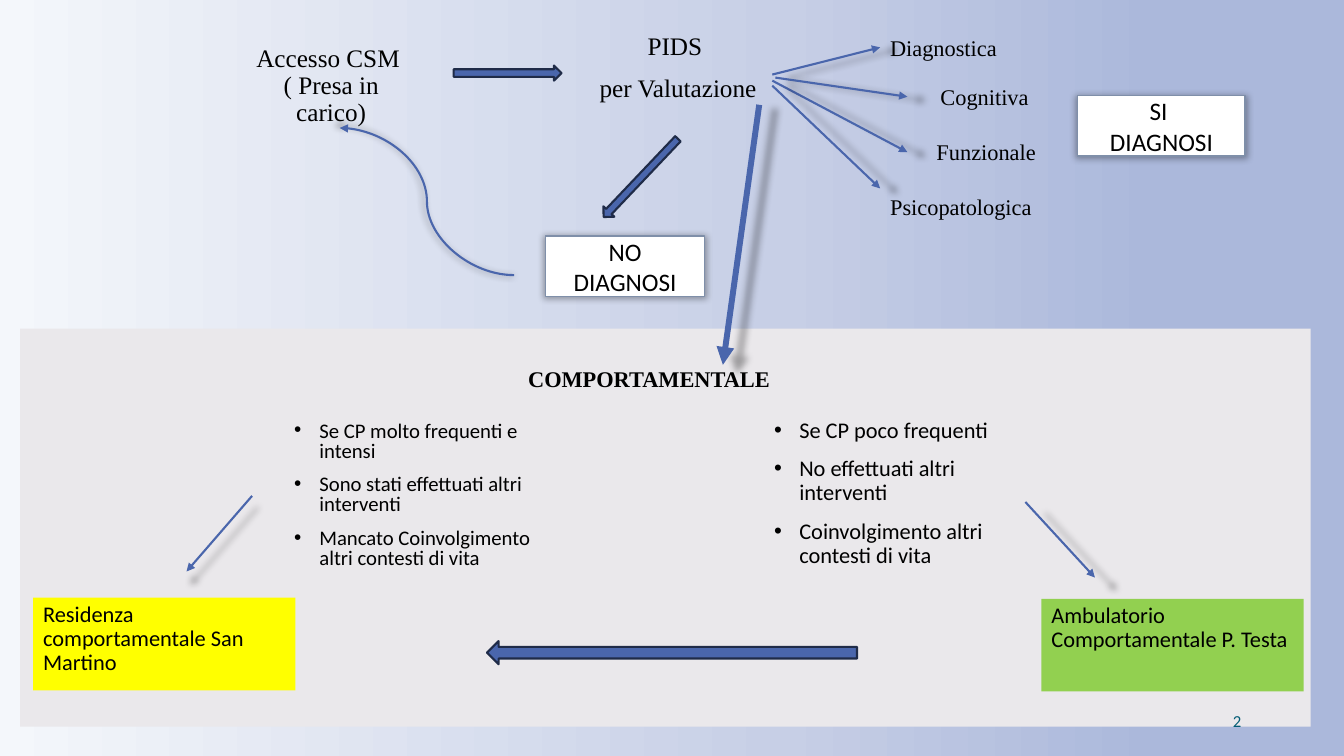
import pptx
import pptx.util
import pptx.dml.color
import pptx.enum.shapes
import pptx.enum.text
from copy import deepcopy
from lxml import etree
from pptx.oxml.ns import qn

PX = 9144  # EMU per px, 100 px to the inch
SERIF, SANS = "Times New Roman", "Calibri"
BLUE, NAVY, BLACK = "4A66AC", "1F2B48", "000000"
SHAPE = pptx.enum.shapes.MSO_SHAPE
CONNECTOR = pptx.enum.shapes.MSO_CONNECTOR
ANCHOR = pptx.enum.text.MSO_ANCHOR
LEFT, CENTER, RIGHT = (pptx.enum.text.PP_ALIGN.LEFT, pptx.enum.text.PP_ALIGN.CENTER,
                       pptx.enum.text.PP_ALIGN.RIGHT)


def rgb(color):
    return pptx.dml.color.RGBColor.from_string(color)


def write(shape, lines, font, size, align=LEFT, anchor=ANCHOR.TOP, spacing=1.0,
          color=BLACK, bold=False, bullets=False):
    """Fill a shape with one paragraph per line; a newline inside a line is a line break."""
    frame = shape.text_frame
    frame.word_wrap = True
    frame.vertical_anchor = anchor
    for index, line in enumerate(lines):
        paragraph = frame.add_paragraph() if index else frame.paragraphs[0]
        paragraph.alignment = align
        paragraph.line_spacing = spacing
        if index and spacing < 1:
            paragraph.space_before = pptx.util.Pt(10)
        if bullets:
            properties = paragraph._p.get_or_add_pPr()
            properties.set("marL", str(25 * PX))
            properties.set("indent", str(-25 * PX))
            bullet_color = etree.SubElement(properties, qn("a:buClr"))
            etree.SubElement(bullet_color, qn("a:srgbClr"), val=BLACK)
            etree.SubElement(properties, qn("a:buFont"), typeface="Arial")
            etree.SubElement(properties, qn("a:buChar"), char="•")
        for part_index, part in enumerate(line.split("\n")):
            if part_index:
                paragraph.add_line_break()
            run = paragraph.add_run()
            run.text = part
            run.font.name = font
            run.font.size = pptx.util.Pt(size)
            run.font.bold = bold
            run.font.color.rgb = rgb(color)


presentation = pptx.Presentation()
presentation.slide_width = 1333 * PX
presentation.slide_height = 750 * PX
slide = presentation.slides.add_slide(presentation.slide_layouts[6])

# Background gradient, left to right
background = slide.background.fill
background.gradient()
background.gradient_angle = 0
stop_list = next(slide.element.iter(qn("a:gsLst")))
for _ in range(2):
    stop_list.append(deepcopy(stop_list[0]))
stops = [(0, "F4F7FB"), (0.58, "C7CFE6"), (0.86, "ABB8DB"), (1, "ABB8DB")]
for stop, (position, color) in zip(background.gradient_stops, stops):
    stop.position = position
    stop.color.rgb = rgb(color)

# Panel, outcome boxes, diagnosis boxes and block arrows
# box, preset, rotation, fill, line colour, line width
shapes = {
    "panel": ((20, 326, 1280, 395), SHAPE.RECTANGLE, 0, "EAE8EB", None, 0),
    "outpatient": ((1033, 594, 260, 92), SHAPE.RECTANGLE, 0, "92D050", None, 0),
    "residence": ((33, 593, 260, 92), SHAPE.RECTANGLE, 0, "FFFF00", None, 0),
    "no diagnosis": ((541, 234, 158, 60), SHAPE.RECTANGLE, 0, "FFFFFF", "7F8FA9", 1),
    "diagnosis": ((1069, 95, 166, 60), SHAPE.RECTANGLE, 0, "FFFFFF", "7F8FA9", 1),
    "to assessment": ((450, 65, 107, 15), SHAPE.RIGHT_ARROW, 0, BLUE, NAVY, 1.5),
    "to no diagnosis": ((582, 169, 107, 15), SHAPE.RIGHT_ARROW, 133.5, BLUE, NAVY, 1.5),
    "to residence": ((483, 636, 367, 23), SHAPE.RIGHT_ARROW, 180, BLUE, NAVY, 1.5),
}
boxes = {}
for name, (box, preset, rotation, fill, line, width) in shapes.items():
    shape = slide.shapes.add_shape(preset, *(value * PX for value in box))
    shape.rotation = rotation
    shape.shadow.inherit = False
    shape.fill.solid()
    shape.fill.fore_color.rgb = rgb(fill)
    if line:
        shape.line.color.rgb = rgb(line)
        shape.line.width = pptx.util.Pt(width)
    else:
        shape.line.fill.background()
    boxes[name] = shape

# Thin arrows: kind, from, to, width
arrows = [
    (CONNECTOR.STRAIGHT, (766, 74), (873, 47), 1.5),
    (CONNECTOR.STRAIGHT, (769, 77), (900, 96), 1.5),
    (CONNECTOR.STRAIGHT, (766, 80), (900, 151), 1.5),
    (CONNECTOR.STRAIGHT, (766, 85), (873, 187), 1.5),
    (CONNECTOR.CURVE, (510, 273), (337, 127), 1.5),
    (CONNECTOR.STRAIGHT, (753, 104), (717, 362), 4.25),
    (CONNECTOR.STRAIGHT, (1017, 498), (1086, 573), 1.5),
    (CONNECTOR.STRAIGHT, (250, 492), (185, 567), 1.5),
]
effect_lists = [boxes[name]._element.spPr.find(qn("a:effectLst"))
                for name in ("no diagnosis", "diagnosis")]
for kind, start, end, width in arrows:
    arrow = slide.shapes.add_connector(kind, *(value * PX for value in start + end))
    arrow.line.color.rgb = rgb(BLUE)
    arrow.line.width = pptx.util.Pt(width)
    etree.SubElement(arrow.line._get_or_add_ln(), qn("a:tailEnd"), type="triangle")
    effect_lists.append(etree.SubElement(arrow._element.spPr, qn("a:effectLst")))

# Soft shadow, slightly larger than its object
for effects in effect_lists:
    shadow = etree.SubElement(effects, qn("a:outerShdw"), blurRad="63500", dist="12700",
                              dir="5400000", sx="102000", sy="102000", algn="ctr",
                              rotWithShape="0")
    shadow_color = etree.SubElement(shadow, qn("a:srgbClr"), val=BLACK)
    etree.SubElement(shadow_color, qn("a:alpha"), val="32000")

# Text in the boxes
for name, lines in [("no diagnosis", ["NO DIAGNOSI"]), ("diagnosis", ["SI ", "DIAGNOSI"])]:
    write(boxes[name], lines, SANS, 18, CENTER, ANCHOR.MIDDLE)
for name, line in [("outpatient", "Ambulatorio Comportamentale P. Testa"),
                   ("residence", "Residenza comportamentale San Martino")]:
    write(boxes[name], [line], SANS, 16, spacing=0.9)

# Free text: box, lines, formatting
assessment = dict(font=SERIF, size=18, align=CENTER, spacing=0.9)
label = dict(font=SERIF, size=16)
texts = [
    ((235, 40, 187, 91), ["Accesso CSM \n( Presa in carico)"],
     dict(assessment, anchor=ANCHOR.MIDDLE)),
    ((584, 29, 177, 91), ["PIDS ", "per Valutazione"], assessment),
    ((873, 29, 164, 37), ["Diagnostica"], label),
    ((923, 78, 146, 37), ["Cognitiva"], label),
    ((919, 132, 150, 37), ["Funzionale"], label),
    ((873, 187, 189, 37), ["Psicopatologica"], label),
    ((514, 357, 278, 37), ["COMPORTAMENTALE"], dict(label, bold=True)),
    ((282, 414, 260, 167),
     ["Se CP molto frequenti e intensi", "Sono stati effettuati altri interventi",
      "Mancato Coinvolgimento altri contesti di vita"],
     dict(font=SANS, size=14.8, spacing=0.8, bullets=True)),
    ((758, 411, 260, 167),
     ["Se CP poco frequenti", "No effettuati altri interventi",
      "Coinvolgimento altri contesti di vita"],
     dict(font=SANS, size=16, spacing=0.9, bullets=True)),
    ((941, 695, 300, 40), ["2"],
     dict(font=SANS, size=12, align=RIGHT, anchor=ANCHOR.MIDDLE, color="035C75")),
]
for box, lines, formatting in texts:
    write(slide.shapes.add_textbox(*(value * PX for value in box)), lines, **formatting)

presentation.save("out.pptx")
